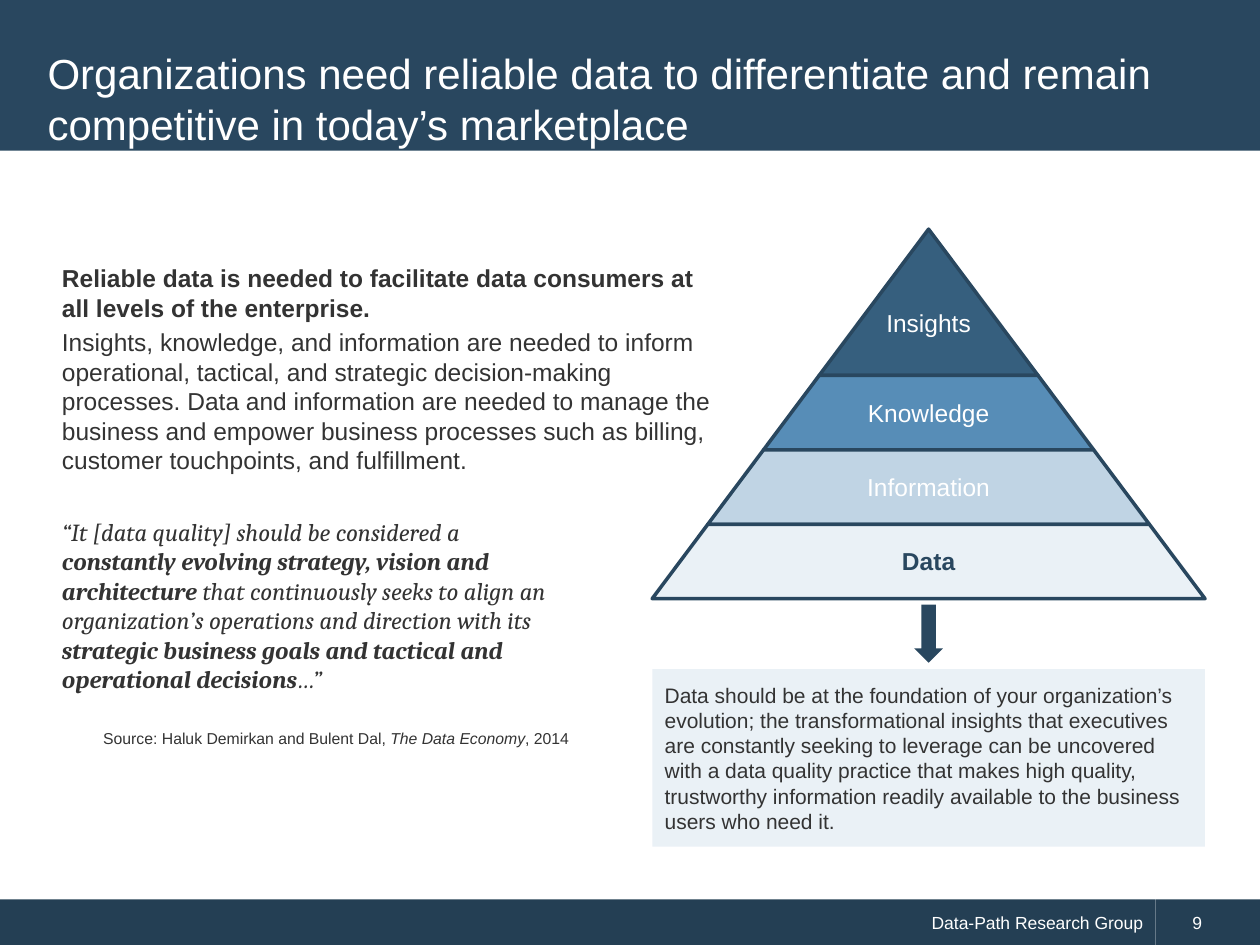
from dataclasses import dataclass

from pptx import Presentation
from pptx.dml.color import RGBColor
from pptx.enum.shapes import MSO_SHAPE
from pptx.enum.text import MSO_ANCHOR, PP_ALIGN
from pptx.util import Cm, Pt


@dataclass(frozen=True)
class Theme:
    navy: str = "29475F"
    footer: str = "243F54"
    deep: str = "365F7E"
    mid: str = "578DB7"
    soft: str = "C0D4E4"
    pale: str = "EAF1F6"
    white: str = "FFFFFF"
    ink: str = "333333"
    sans: str = "Arial"
    serif: str = "Cambria"
    title: int = 24
    body: int = 14
    note: int = 12
    foot: int = 10
    source: int = 9


def write(para, text, size=14, color="333333", font="Arial", bold=False, italic=False):
    run = para.add_run()
    run.text = text
    run.font.size = Pt(size)
    run.font.name = font
    run.font.bold = bold
    run.font.italic = italic
    run.font.color.rgb = RGBColor.from_string(color)


class Deck:
    def __init__(self, theme, slide):
        self.theme = theme
        self.slide = slide

    def shape(self, kind, left, top, width, height, fill, line=None):
        shape = self.slide.shapes.add_shape(
            kind, Cm(left), Cm(top), Cm(width), Cm(height))
        shape.shadow.inherit = False
        shape.fill.solid()
        shape.fill.fore_color.rgb = RGBColor.from_string(fill)
        if line:
            shape.line.color.rgb = RGBColor.from_string(line)
            shape.line.width = Pt(2)
        else:
            shape.line.fill.background()
        return shape

    def rect(self, left, top, width, height, fill):
        return self.shape(MSO_SHAPE.RECTANGLE, left, top, width, height, fill)

    def label(self, left, top, width, height):
        return self.slide.shapes.add_textbox(
            Cm(left), Cm(top), Cm(width), Cm(height))

    def frame(self, shape, anchor=MSO_ANCHOR.MIDDLE, inset=(0.25, 0.13, 0.25, 0.13), wrap=True):
        frame = shape.text_frame
        frame.word_wrap = wrap
        frame.vertical_anchor = anchor
        (frame.margin_left, frame.margin_top,
         frame.margin_right, frame.margin_bottom) = map(Cm, inset)
        return frame

    def para(self, frame, runs, align=PP_ALIGN.LEFT, before=0, after=0, first=True, **style):
        para = frame.paragraphs[0] if first else frame.add_paragraph()
        para.alignment = align
        para.space_before = Pt(before)
        para.space_after = Pt(after)
        for text, extra in runs:
            write(para, text, **{**style, **extra})

    def tiers(self, center, top, slope, rows):
        width = 0
        for text, height, fill, style in rows:
            width += 2 * slope * height
            tier = self.shape(MSO_SHAPE.TRAPEZOID, center - width / 2, top,
                              width, height, fill, self.theme.navy)
            tier.adjustments[0] = slope
            frame = self.frame(tier, inset=(0.05, 0.05, 0.05, 0.2), wrap=False)
            self.para(frame, [(text, style)], PP_ALIGN.CENTER,
                      size=self.theme.body)
            top += height


def main():
    theme = Theme()
    show = Presentation()
    show.slide_width, show.slide_height = Cm(25.4), Cm(19.05)
    deck = Deck(theme, show.slides.add_slide(show.slide_layouts[6]))
    bold, plain = {"bold": True}, {}
    white = {"color": theme.white}

    bar = deck.rect(0, 18.13, 23.29, 0.92, theme.footer)
    deck.para(deck.frame(bar), [("Data-Path Research Group", white)],
              PP_ALIGN.RIGHT, size=theme.foot)
    page = deck.rect(23.29, 18.13, 2.11, 0.92, theme.footer)
    deck.para(deck.frame(page, inset=(0.75, 0.13, 0.25, 0.13)),
              [("9", white)], size=theme.foot)

    deck.rect(0, 0, 25.4, 3.04, theme.navy)
    title = deck.label(0.71, 0.76, 23.95, 2.44)
    deck.para(deck.frame(title), [(
        "Organizations need reliable data to differentiate and remain "
        "competitive in today’s marketplace", white)], size=theme.title)

    body = deck.frame(deck.rect(1, 5.18, 13.87, 4.55, theme.white), MSO_ANCHOR.TOP)
    deck.para(body, [(
        "Reliable data is needed to facilitate data consumers at all levels "
        "of the enterprise.", bold)], after=3, size=theme.body)
    deck.para(body, [(
        "Insights, knowledge, and information are needed to inform operational, "
        "tactical, and strategic decision-making processes. Data and information "
        "are needed to manage the business and empower business processes such as "
        "billing, customer touchpoints, and fulfillment.", plain)],
        after=3, first=False, size=theme.body)

    quote = deck.frame(deck.rect(1, 10.29, 10.72, 5.56, theme.white), MSO_ANCHOR.TOP)
    deck.para(quote, [
        ("“It [data quality] should be considered a ", plain),
        ("constantly evolving strategy, vision and architecture ", bold),
        ("that continuously seeks to align an organization’s operations "
         "and direction with its ", plain),
        ("strategic business goals and tactical and operational decisions", bold),
        ("…”", plain),
    ], after=7, size=theme.body, font=theme.serif, italic=True)
    deck.para(quote, [
        ("Source: Haluk Demirkan and Bulent Dal, ", plain),
        ("The Data Economy", {"italic": True}),
        (", 2014", plain),
    ], PP_ALIGN.RIGHT, before=13, after=3, first=False, size=theme.source)

    center, base = 18.72, 11.14
    deck.tiers(center, 4.62, 0.748, [
        ("Insights", 2.95, theme.deep, white),
        ("Knowledge", 1.5, theme.mid, white),
        ("Information", 1.5, theme.soft, white),
        ("Data", 1.5, theme.pale, {"color": theme.navy, "bold": True}),
    ])
    note = deck.rect(center - base / 2, 13.49, base, 3.58, theme.pale)
    deck.para(deck.frame(note, inset=(0.25,) * 4), [(
        "Data should be at the foundation of your organization’s evolution; the "
        "transformational insights that executives are constantly seeking to "
        "leverage can be uncovered with a data quality practice that makes high "
        "quality, trustworthy information readily available to the business users "
        "who need it.", plain)], size=theme.note)
    deck.shape(MSO_SHAPE.DOWN_ARROW, center - 0.29, 12.19, 0.58, 1.17, theme.navy)

    show.save("out.pptx")


if __name__ == "__main__":
    main()
